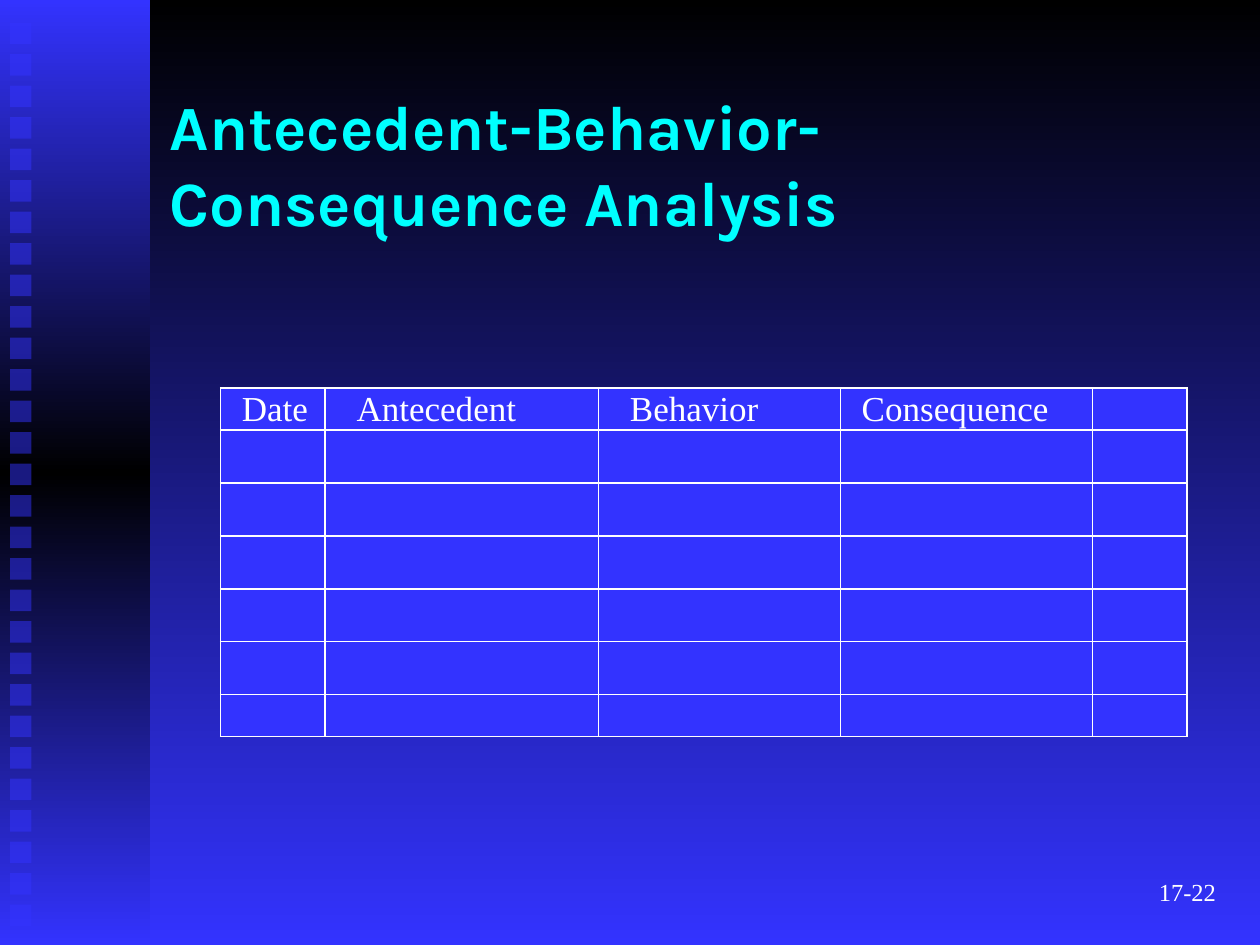
from copy import deepcopy

from lxml import etree
from pptx import Presentation
from pptx.dml.color import RGBColor
from pptx.enum.shapes import MSO_SHAPE
from pptx.enum.text import MSO_ANCHOR, PP_ALIGN
from pptx.oxml import parse_xml
from pptx.oxml.ns import nsdecls, qn
from pptx.util import Inches, Pt

RECTANGLE = MSO_SHAPE.RECTANGLE
MIDDLE = MSO_ANCHOR.MIDDLE
LEFT, RIGHT = PP_ALIGN.LEFT, PP_ALIGN.RIGHT
COLORS = {"black": "000000", "blue": "3333FF", "cyan": "00FFFF", "white": "FFFFFF"}


def color(name):
    return RGBColor.from_string(COLORS[name])


def write(frame, text, size=20, font="Times New Roman", ink="white", bold=False, align=LEFT):
    frame.word_wrap = True
    frame.vertical_anchor = MIDDLE
    para = frame.paragraphs[0]
    para.alignment = align
    span = para.add_run()
    span.text = text
    span.font.size = Pt(size)
    span.font.name = font
    span.font.bold = bold
    span.font.color.rgb = color(ink)


deck = Presentation()
deck.slide_width, deck.slide_height = Inches(10), Inches(7.5)
page = deck.slides.add_slide(deck.slide_layouts[6])

# Background and side band, both vertical gradients
band = page.shapes.add_shape(RECTANGLE, 0, 0, Inches(1.19), Inches(7.5))
band.shadow.inherit = False
band.line.fill.background()
for fill, start in ((page.background.fill, "black"), (band.fill, "blue")):
    fill.gradient()
    fill.gradient_angle = 270
    fill.gradient_stops[0].color.rgb = color(start)
    fill.gradient_stops[1].color.rgb = color("blue")

# Black middle stop of the band
first_stop = band.fill._xPr.find(".//" + qn("a:gs"))
middle_stop = deepcopy(first_stop)
first_stop.addnext(middle_stop)
middle_stop.set("pos", "50000")
band.fill.gradient_stops[1].color.rgb = color("black")

# Column of half-transparent squares
for index in range(29):
    square = page.shapes.add_shape(
        RECTANGLE, Inches(0.08), Inches(0.18 + 0.25 * index), Inches(0.17), Inches(0.17))
    square.shadow.inherit = False
    square.line.fill.background()
    square.fill.solid()
    square.fill.fore_color.rgb = color("blue")
    tint = square.fill._xPr.find(".//" + qn("a:srgbClr"))
    etree.SubElement(tint, qn("a:alpha")).set("val", "50000")

# Title
title = page.shapes.add_textbox(Inches(1.25), Inches(0.67), Inches(8.5), Inches(1.25))
write(title.text_frame, "Antecedent-Behavior-Consequence Analysis",
      size=36, font="Karla", ink="cyan", bold=True)

# Record table: heading row and six empty rows
headings = ["Date", "Antecedent", "Behavior", "Consequence", ""]
indents = [0.17, 0.25, 0.25, 0.17, 0.17]
widths = [0.83, 2.17, 1.92, 2, 0.75]
heights = [0.33] + [0.42] * 5 + [0.33]
table = page.shapes.add_table(
    len(heights), len(widths), Inches(1.75), Inches(3.08), Inches(7.67), Inches(2.75)).table
for column, width in zip(table.columns, widths):
    column.width = Inches(width)
for row, height in zip(table.rows, heights):
    row.height = Inches(height)
    for cell, indent in zip(row.cells, indents):
        cell.margin_left = Inches(indent)
        cell.margin_right = cell.margin_top = cell.margin_bottom = 0
        cell.vertical_anchor = MIDDLE
        for side in ("lnL", "lnR", "lnT", "lnB"):
            cell._tc.get_or_add_tcPr().append(parse_xml(
                f'<a:{side} {nsdecls("a")} w="{Pt(1)}"><a:solidFill>'
                f'<a:srgbClr val="{COLORS["white"]}"/></a:solidFill></a:{side}>'))
        cell.fill.solid()
        cell.fill.fore_color.rgb = color("blue")
        cell.text_frame.paragraphs[0].font.size = Pt(20)
for cell, heading in zip(table.rows[0].cells, headings):
    if heading:
        write(cell.text_frame, heading)

# Page number
number = page.shapes.add_textbox(Inches(7.67), Inches(6.83), Inches(2.08), Inches(0.5))
write(number.text_frame, "17-22", size=14, align=RIGHT)

deck.save("out.pptx")
